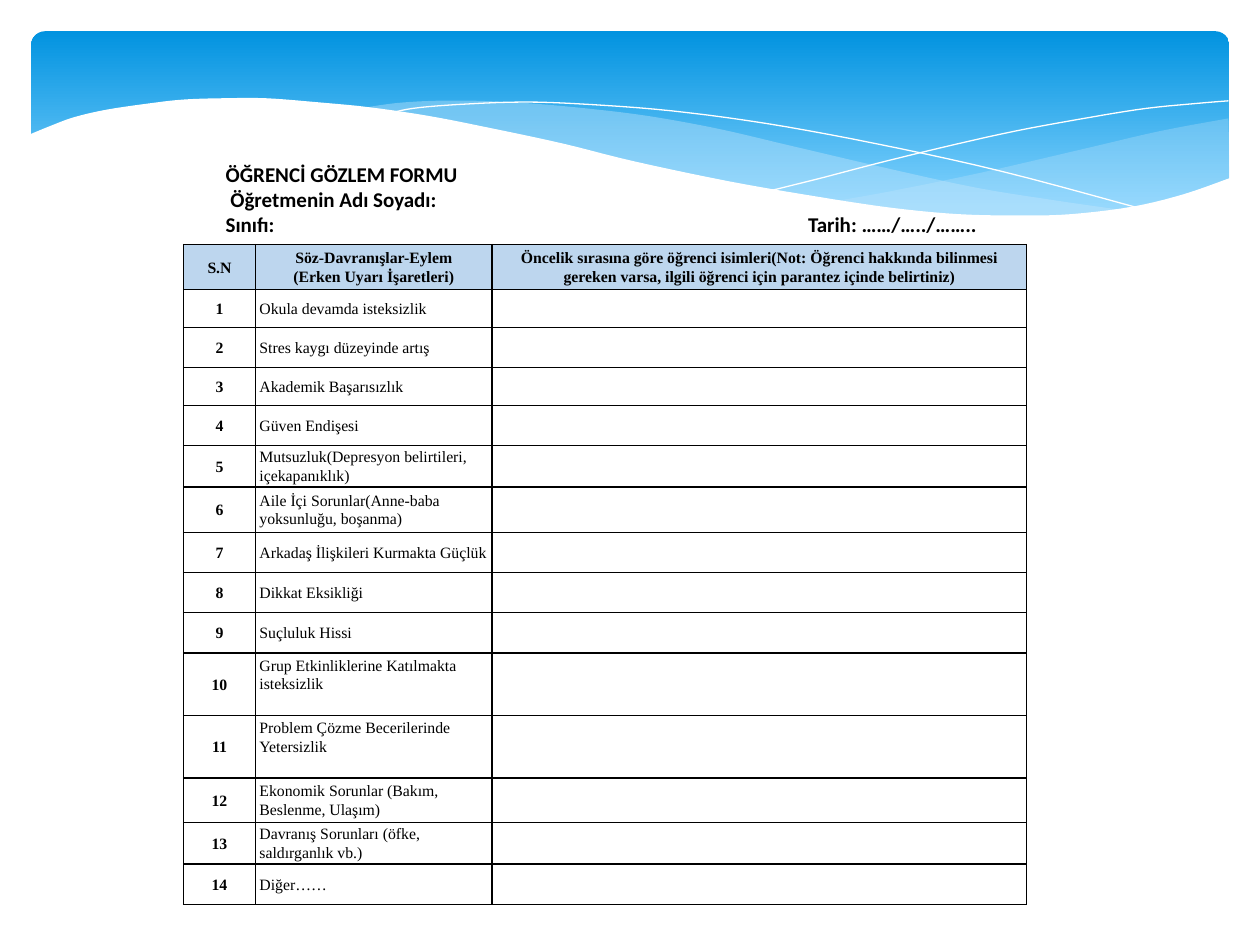
from lxml.etree import SubElement
from pptx import Presentation
from pptx.dml.color import RGBColor as Rgb
from pptx.enum.shapes import MSO_SHAPE as Shape
from pptx.enum.text import MSO_ANCHOR as Anchor, PP_ALIGN as Align
from pptx.oxml.ns import qn
from pptx.util import Cm, Pt

COLORS = {"sky": "0293E0", "pale sky": "83D3FE", "mist": "C6E7FC",
          "white": "FFFFFF", "header": "BDD6EE", "ink": "000000"}
HEADING_FONT = {"name": "Calibri", "size": Pt(12), "bold": True}
LABEL_FONT = {"name": "Times New Roman", "size": Pt(9), "bold": True}
ENTRY_FONT = {**LABEL_FONT, "bold": False}
CENTERED = {"alignment": Align.CENTER, "line_spacing": 1.07}
LEFT = {"alignment": Align.LEFT, "line_spacing": 1.07}
CELL = {"vertical_anchor": Anchor.MIDDLE, "margin_left": Cm(0.08),
        "margin_right": Cm(0.08), "margin_top": 0, "margin_bottom": 0}

# Each outline is a list of smooth runs of points, in inches.
RIGHT_BAND = [
    [(9.75, 0.94), (9.21, 1.04), (8.61, 1.18), (7.79, 1.37), (7.06, 1.52), (6.61, 1.6)],
    [(6.61, 1.6), (7.19, 1.67), (7.69, 1.71), (8.14, 1.72), (8.63, 1.7),
     (9.05, 1.63), (9.42, 1.54), (9.76, 1.41)],
]
LONG_BAND = [
    [(8.93, 1.67), (8.37, 1.59), (7.75, 1.49), (7.06, 1.34), (6.29, 1.16), (5.69, 1.02),
     (5.14, 0.92), (4.65, 0.86), (4.2, 0.82), (3.8, 0.8), (3.44, 0.8), (3.13, 0.82),
     (2.86, 0.86)],
    [(2.86, 0.86), (3.42, 0.94), (4.04, 1.06), (4.91, 1.26), (5.66, 1.43), (6.34, 1.56),
     (6.95, 1.65), (7.48, 1.7), (7.96, 1.73), (8.38, 1.72), (8.93, 1.67)],
]
FALLING_LINE = [
    [(3.09, 0.9), (3.28, 0.86), (3.63, 0.83), (4.16, 0.81), (4.69, 0.83), (5.33, 0.88),
     (6.08, 0.98), (6.95, 1.14), (7.95, 1.36), (9.07, 1.66)],
]
RISING_LINE = [
    [(6.13, 1.51), (6.53, 1.41), (6.95, 1.3), (7.48, 1.17), (8.06, 1.04), (8.66, 0.93),
     (9.1, 0.86), (9.51, 0.82), (9.75, 0.8)],
]
WHITE_WAVE = [
    [(9.77, 1.41), (9.4, 1.54), (8.99, 1.64), (8.5, 1.7), (8.09, 1.71), (7.61, 1.7),
     (7.08, 1.65), (6.48, 1.56), (5.79, 1.44), (5.03, 1.28), (4.47, 1.14), (3.91, 1.02),
     (3.4, 0.92), (2.92, 0.85), (2.5, 0.81), (2.11, 0.78), (1.77, 0.78), (1.46, 0.79),
     (1.19, 0.82), (0.85, 0.87), (0.59, 0.93), (0.4, 1), (0.23, 1.07)],
    [(0.23, 2.24), (9.77, 2.24)],
]

HEADING = ["ÖĞRENCİ GÖZLEM FORMU", " Öğretmenin Adı Soyadı:",
           "Sınıfı:\tTarih: ……/…../…….."]
HEADER = ["S.N", "Söz-Davranışlar-Eylem\n(Erken Uyarı İşaretleri)",
          "Öncelik sırasına göre öğrenci isimleri(Not: Öğrenci hakkında bilinmesi "
          "gereken varsa, ilgili öğrenci için parantez içinde belirtiniz)"]
SIGNS = ["Okula devamda isteksizlik", "Stres kaygı düzeyinde artış",
         "Akademik Başarısızlık", "Güven Endişesi",
         "Mutsuzluk(Depresyon belirtileri, içekapanıklık)",
         "Aile İçi Sorunlar(Anne-baba yoksunluğu, boşanma)",
         "Arkadaş İlişkileri Kurmakta Güçlük", "Dikkat Eksikliği", "Suçluluk Hissi",
         "Grup Etkinliklerine Katılmakta isteksizlik",
         "Problem Çözme Becerilerinde Yetersizlik",
         "Ekonomik Sorunlar (Bakım, Beslenme, Ulaşım)",
         "Davranış Sorunları (öfke, saldırganlık vb.)", "Diğer……"]
COLUMN_WIDTHS = [1.45, 4.77, 10.77]
ROW_HEIGHTS = [0.91, 0.76, 0.81, 0.76, 0.81, 0.84, 0.91, 0.81, 0.81, 0.81,
               1.26, 1.26, 0.9, 0.84, 0.81]
RAISED_ROWS = (10, 11)


def rgb(color):
    return Rgb.from_string(COLORS[color])


def apply(target, values):
    for name, value in values.items():
        setattr(target, name, value)


def smooth(points, steps=5):
    """Return points along a Catmull-Rom curve through the given ones."""
    if len(points) < 3:
        return points
    padded = [points[0], *points, points[-1]]
    curve = [points[0]]
    for a, b, c, d in zip(padded, padded[1:], padded[2:], padded[3:]):
        for t in (step / steps for step in range(1, steps + 1)):
            curve.append(tuple(
                (2 * q + (r - p) * t + (2 * p - 5 * q + 4 * r - s) * t ** 2
                 + (3 * q - p - 3 * r + s) * t ** 3) / 2
                for p, q, r, s in zip(a, b, c, d)))
    return curve


class FormSlide:
    def __init__(self, deck):
        self.slide = deck.slides.add_slide(deck.slide_layouts[6])
        self.shapes = self.slide.shapes

    def banner(self, left, top, width, height):
        banner = self.shapes.add_shape(Shape.ROUNDED_RECTANGLE, Cm(left), Cm(top),
                                       Cm(width), Cm(height))
        banner.adjustments[0] = 0.07
        banner.shadow.inherit = False
        banner.line.fill.background()
        banner.fill.gradient()
        banner.fill.gradient_angle = 270
        for stop, color, position in zip(banner.fill.gradient_stops,
                                         ("sky", "pale sky"), (0, 0.9)):
            stop.color.rgb = rgb(color)
            stop.position = position

    def outline(self, runs, closed):
        points = [(Cm(x * 2.54), Cm(y * 2.54)) for run in runs for x, y in smooth(run)]
        builder = self.shapes.build_freeform(*points[0])
        builder.add_line_segments(points[1:], close=closed)
        outline = builder.convert_to_shape()
        outline.shadow.inherit = False
        return outline

    def wave(self, runs, color, opacity=100):
        wave = self.outline(runs, True)
        wave.line.fill.background()
        wave.fill.solid()
        wave.fill.fore_color.rgb = rgb(color)
        if opacity < 100:
            tint = next(wave.element.iter(qn("a:srgbClr")))
            SubElement(tint, qn("a:alpha"), val=str(opacity * 1000))

    def hairline(self, runs):
        hairline = self.outline(runs, False)
        hairline.fill.background()
        hairline.line.color.rgb = rgb("white")
        hairline.line.width = 0

    def set_text(self, frame, text, font, layout):
        frame.text = text
        for paragraph in frame.paragraphs:
            apply(paragraph, layout)
            for run in paragraph.runs:
                apply(run.font, font)
                run.font.color.rgb = rgb("ink")

    def heading(self, left, top, width, height, lines, tab):
        frame = self.shapes.add_textbox(Cm(left), Cm(top), Cm(width), Cm(height)).text_frame
        apply(frame, {"word_wrap": True, "vertical_anchor": Anchor.TOP})
        self.set_text(frame, "\n".join(lines), HEADING_FONT, {"alignment": Align.LEFT})
        stops = SubElement(frame.paragraphs[-1]._p.get_or_add_pPr(), qn("a:tabLst"))
        SubElement(stops, qn("a:tab"), pos=str(Cm(tab)), algn="l")

    def borders(self, cell):
        properties = cell._tc.get_or_add_tcPr()
        for side in ("L", "R", "T", "B"):
            border = SubElement(properties, qn(f"a:ln{side}"), w=str(Pt(1)))
            fill = SubElement(border, qn("a:solidFill"))
            SubElement(fill, qn("a:srgbClr"), val=COLORS["ink"])

    def table(self, left, top, rows):
        table = self.shapes.add_table(len(rows), len(COLUMN_WIDTHS), Cm(left), Cm(top),
                                      Cm(sum(COLUMN_WIDTHS)), Cm(sum(ROW_HEIGHTS))).table
        for column, width in zip(table.columns, COLUMN_WIDTHS):
            column.width = Cm(width)
        for row, height in zip(table.rows, ROW_HEIGHTS):
            row.height = Cm(height)
        for r, texts in enumerate(rows):
            for c, text in enumerate(texts):
                self.cell(table.cell(r, c), text, r == 0, r == 0 or c == 0)
        for r in RAISED_ROWS:
            table.cell(r, 1).margin_bottom = Cm(0.39)

    def cell(self, cell, text, is_header, is_label):
        apply(cell, CELL)
        self.borders(cell)
        if is_header:
            cell.fill.solid()
            cell.fill.fore_color.rgb = rgb("header")
        else:
            cell.fill.background()
        self.set_text(cell.text_frame, text, LABEL_FONT if is_label else ENTRY_FONT,
                      CENTERED if is_label else LEFT)
        if not text:
            SubElement(cell.text_frame.paragraphs[0]._p, qn("a:endParaRPr"), sz="900")


def main():
    deck = Presentation()
    apply(deck, {"slide_width": Cm(25.4), "slide_height": Cm(19.05)})
    form = FormSlide(deck)
    form.banner(0.63, 0.63, 24.15, 3.96)
    form.wave(RIGHT_BAND, "mist", 29)
    form.wave(LONG_BAND, "mist", 40)
    form.hairline(FALLING_LINE)
    form.hairline(RISING_LINE)
    form.wave(WHITE_WAVE, "white")
    entries = [[str(number), sign, ""] for number, sign in enumerate(SIGNS, 1)]
    form.table(3.7, 4.93, [HEADER, *entries])
    form.heading(4.3, 3.13, 17.4, 2.56, HEADING, tab=11.74)
    deck.save("out.pptx")


if __name__ == "__main__":
    main()
